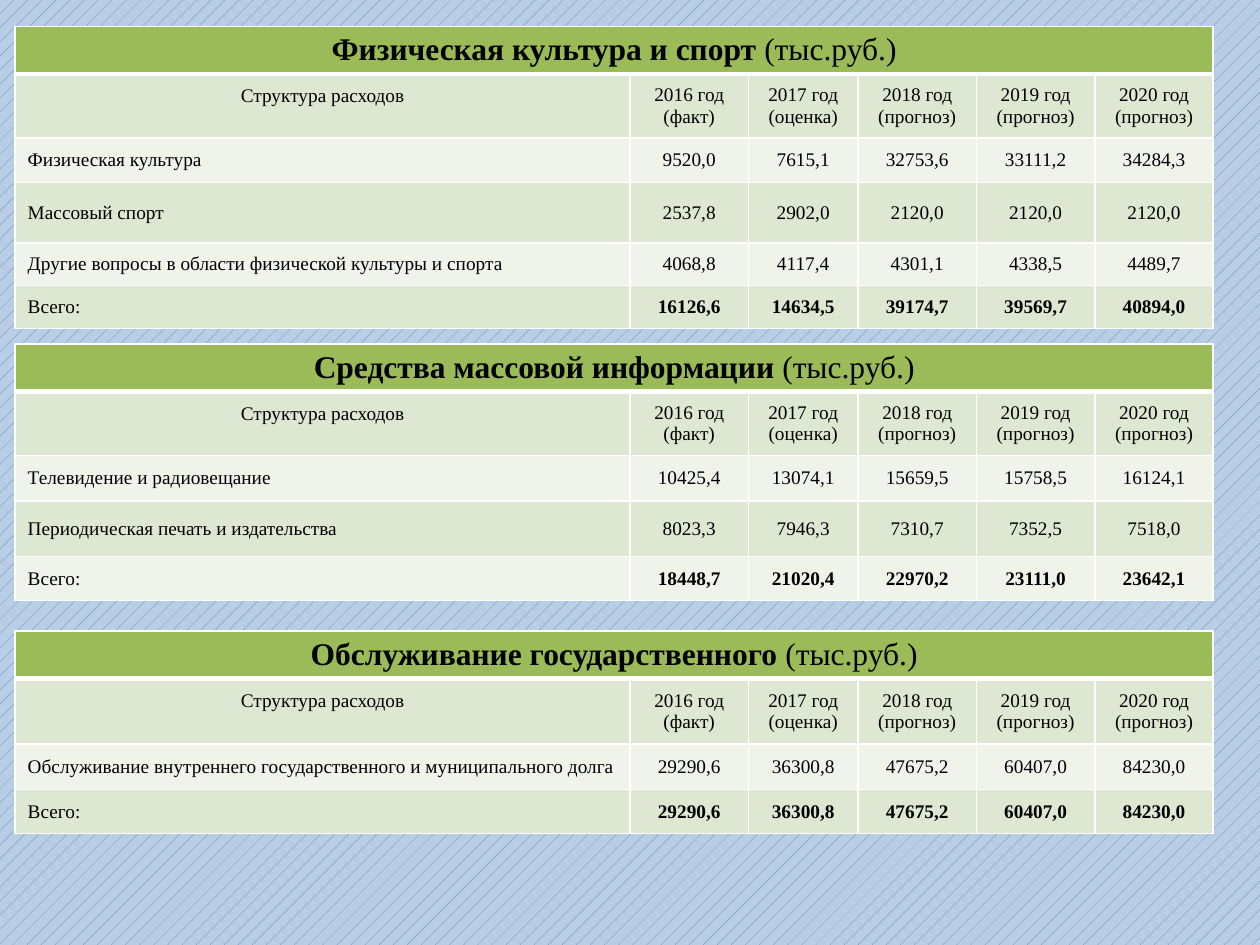
from lxml import etree
from pptx import Presentation
from pptx import util as u
from pptx.dml.color import RGBColor
from pptx.enum import dml, text
from pptx.oxml.ns import qn

BLACK = RGBColor(0x00, 0x00, 0x00)
WHITE = RGBColor(0xFF, 0xFF, 0xFF)
GREEN = RGBColor(0x9B, 0xBB, 0x59)
BANDS = [RGBColor(0xDE, 0xE7, 0xD1), RGBColor(0xEF, 0xF3, 0xEA)]
PATTERN_LINE = RGBColor(0x4F, 0x81, 0xBD)
PATTERN_BACK = RGBColor(0xB9, 0xCD, 0xE5)

LEFT = 0.12
COLUMNS = [4.88, 0.94, 0.87, 0.94, 0.94, 0.94]
HEADINGS = ["Структура расходов", "2016 год\n(факт)", "2017 год\n(оценка)",
            "2018 год\n(прогноз)", "2019 год\n(прогноз)", "2020 год\n(прогноз)"]

# Title, top, row heights, rows of values
SECTIONS = [
    ("Физическая культура и спорт ", 0.21, [0.34, 0.51, 0.35, 0.48, 0.34, 0.34], [
        ["Физическая культура", "9520,0", "7615,1", "32753,6", "33111,2", "34284,3"],
        ["Массовый спорт", "2537,8", "2902,0", "2120,0", "2120,0", "2120,0"],
        ["Другие вопросы в области физической культуры и спорта",
         "4068,8", "4117,4", "4301,1", "4338,5", "4489,7"],
        ["Всего:", "16126,6", "14634,5", "39174,7", "39569,7", "40894,0"],
    ]),
    ("Средства массовой информации ", 2.73, [0.35, 0.51, 0.36, 0.44, 0.35], [
        ["Телевидение и радиовещание",
         "10425,4", "13074,1", "15659,5", "15758,5", "16124,1"],
        ["Периодическая печать и издательства",
         "8023,3", "7946,3", "7310,7", "7352,5", "7518,0"],
        ["Всего:", "18448,7", "21020,4", "22970,2", "23111,0", "23642,1"],
    ]),
    ("Обслуживание государственного ", 5.01, [0.35, 0.52, 0.36, 0.35], [
        ["Обслуживание внутреннего государственного и муниципального долга",
         "29290,6", "36300,8", "47675,2", "60407,0", "84230,0"],
        ["Всего:", "29290,6", "36300,8", "47675,2", "60407,0", "84230,0"],
    ]),
]


def style_cell(cell, fill, size, bold, align, bottom_width=1):
    cell.fill.solid()
    cell.fill.fore_color.rgb = fill
    cell.vertical_anchor = text.MSO_ANCHOR.MIDDLE
    for paragraph in cell.text_frame.paragraphs:
        paragraph.alignment = align
        for run in paragraph.runs:
            run.font.name = "Times New Roman"
            run.font.size = u.Pt(size)
            run.font.bold = bold
            run.font.color.rgb = BLACK
    properties = cell._tc.get_or_add_tcPr()
    widths = {"a:lnL": 1, "a:lnR": 1, "a:lnT": 1, "a:lnB": bottom_width}
    for position, (tag, width) in enumerate(widths.items()):
        line = etree.Element(qn(tag), w=str(u.Pt(width)))
        solid = etree.SubElement(line, qn("a:solidFill"))
        etree.SubElement(solid, qn("a:srgbClr"), val=str(WHITE))
        properties.insert(position, line)


presentation = Presentation()
presentation.slide_width, presentation.slide_height = u.Inches(10), u.Inches(7.5)
slide = presentation.slides.add_slide(presentation.slide_layouts[6])
background = slide.background.fill
background.patterned()
background.pattern = dml.MSO_PATTERN.PERCENT_10
background.fore_color.rgb = PATTERN_LINE
background.back_color.rgb = PATTERN_BACK

for title, top, heights, values in SECTIONS:
    table = slide.shapes.add_table(
        len(heights), len(COLUMNS), u.Inches(LEFT), u.Inches(top),
        u.Inches(sum(COLUMNS)), u.Inches(sum(heights))).table
    table.first_row = table.horz_banding = False
    for column, width in zip(table.columns, COLUMNS):
        column.width = u.Inches(width)
    for row, height in zip(table.rows, heights):
        row.height = u.Inches(height)

    title_cell = table.cell(0, 0)
    title_cell.merge(table.cell(0, len(COLUMNS) - 1))
    title_cell.text_frame.text = title
    unit_run = title_cell.text_frame.paragraphs[0].add_run()
    unit_run.text = "(тыс.руб.)"
    for cell in table.rows[0].cells:
        style_cell(cell, GREEN, 18, True, text.PP_ALIGN.CENTER, bottom_width=3)
    unit_run.font.bold = False

    for r, row in enumerate([HEADINGS] + values):
        for c, content in enumerate(row):
            cell = table.cell(r + 1, c)
            cell.text_frame.text = content
            is_label = c == 0 and r > 0
            is_total = c > 0 and r == len(values)
            align = text.PP_ALIGN.LEFT if is_label else text.PP_ALIGN.CENTER
            style_cell(cell, BANDS[r % 2], 11, is_total, align)

    # The first heading lines up with the year lines beside it
    heading = table.cell(1, 0)
    heading.vertical_anchor = text.MSO_ANCHOR.TOP
    heading.margin_top = u.Inches(0.09)

presentation.save("out.pptx")
